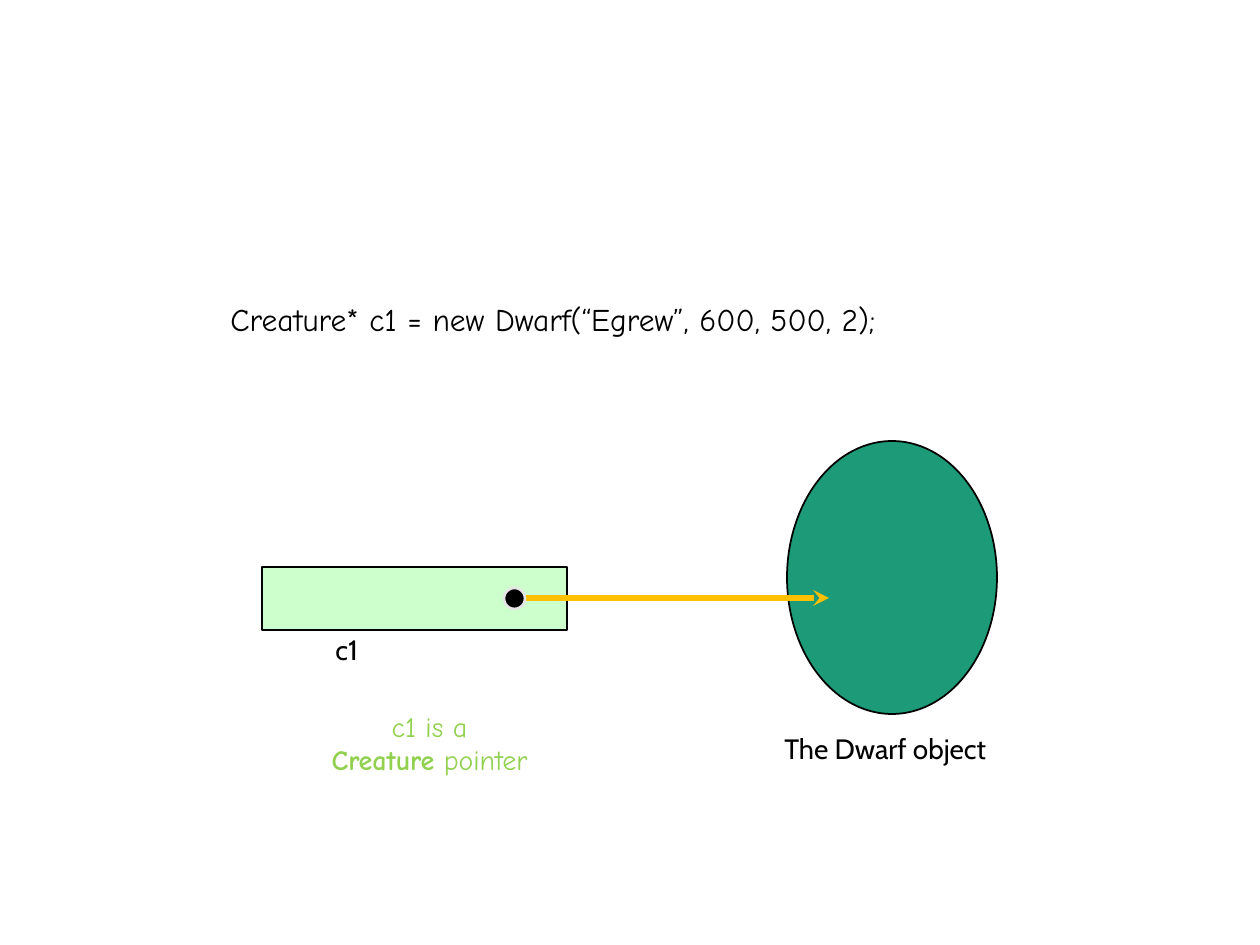
"""Build a slide showing a Creature pointer that refers to a Dwarf object."""
from lxml import etree
from pptx import Presentation
from pptx.dml.color import RGBColor
from pptx.enum import shapes, text
from pptx.oxml.ns import qn
from pptx.util import Emu, Pt

PX = 914400 // 126
COLORS = {"black": "000000", "object": "1D9A78", "pointer": "CCFFCC",
          "arrow": "FFC000", "dot_edge": "E7E6E6", "note": "92D050"}


def px(*values):
    return [Emu(v * PX) for v in values]


def rgb(name):
    return RGBColor.from_string(COLORS[name])


prs = Presentation()
prs.slide_width, prs.slide_height = px(1260, 945)
slide = prs.slides.add_slide(prs.slide_layouts[6])

OVAL, RECT = shapes.MSO_SHAPE.OVAL, shapes.MSO_SHAPE.RECTANGLE
outlines = [
    (OVAL, (787, 441, 210, 273), "object", "black", 1),
    (RECT, (262, 567, 305, 63), "pointer", "black", 1),
    (OVAL, (504, 588, 21, 21), "black", "dot_edge", 1.5),
]
for kind, box, fill, line, width in outlines:
    if fill == "black":
        arrow = slide.shapes.add_connector(
            shapes.MSO_CONNECTOR.STRAIGHT, *px(514, 598, 829, 598))
        arrow.line.color.rgb = rgb("arrow")
        arrow.line.width = Pt(3)
        etree.SubElement(arrow.line._get_or_add_ln(), qn("a:tailEnd"), type="stealth")
        etree.SubElement(arrow._element.spPr, qn("a:effectLst"))
    sp = slide.shapes.add_shape(kind, *px(*box))
    sp.shadow.inherit = False
    sp.fill.solid()
    sp.fill.fore_color.rgb = rgb(fill)
    sp.line.color.rgb = rgb(line)
    sp.line.width = Pt(width)

LEFT, CENTER = text.PP_ALIGN.LEFT, text.PP_ALIGN.CENTER
labels = [
    ((218, 294, 748, 50), "Comic Neue", 18, "black", LEFT,
     [[("Creature* c1 = new Dwarf(“Egrew”, 600, 500, 2);", False)]]),
    ((772, 725, 241, 47), "Cabin", 16, "black", LEFT, [[("The Dwarf object", False)]]),
    ((323, 626, 54, 47), "Cabin", 16, "black", LEFT, [[("c1", False)]]),
    ((305, 703, 249, 81), "Comic Neue", 16, "note", CENTER,
     [[("c1 is a", False)], [("Creature", True), (" pointer", False)]]),
]
for box, font, size, color, align, lines in labels:
    tf = slide.shapes.add_textbox(*px(*box)).text_frame
    tf.word_wrap = False
    tf.auto_size = text.MSO_AUTO_SIZE.SHAPE_TO_FIT_TEXT
    for i, runs in enumerate(lines):
        p = tf.add_paragraph() if i else tf.paragraphs[0]
        p.alignment = align
        p.font.name = font
        p.font.size = Pt(size)
        p.font.color.rgb = rgb(color)
        for words, bold in runs:
            r = p.add_run()
            r.text = words
            r.font.bold = bold

prs.save("out.pptx")
